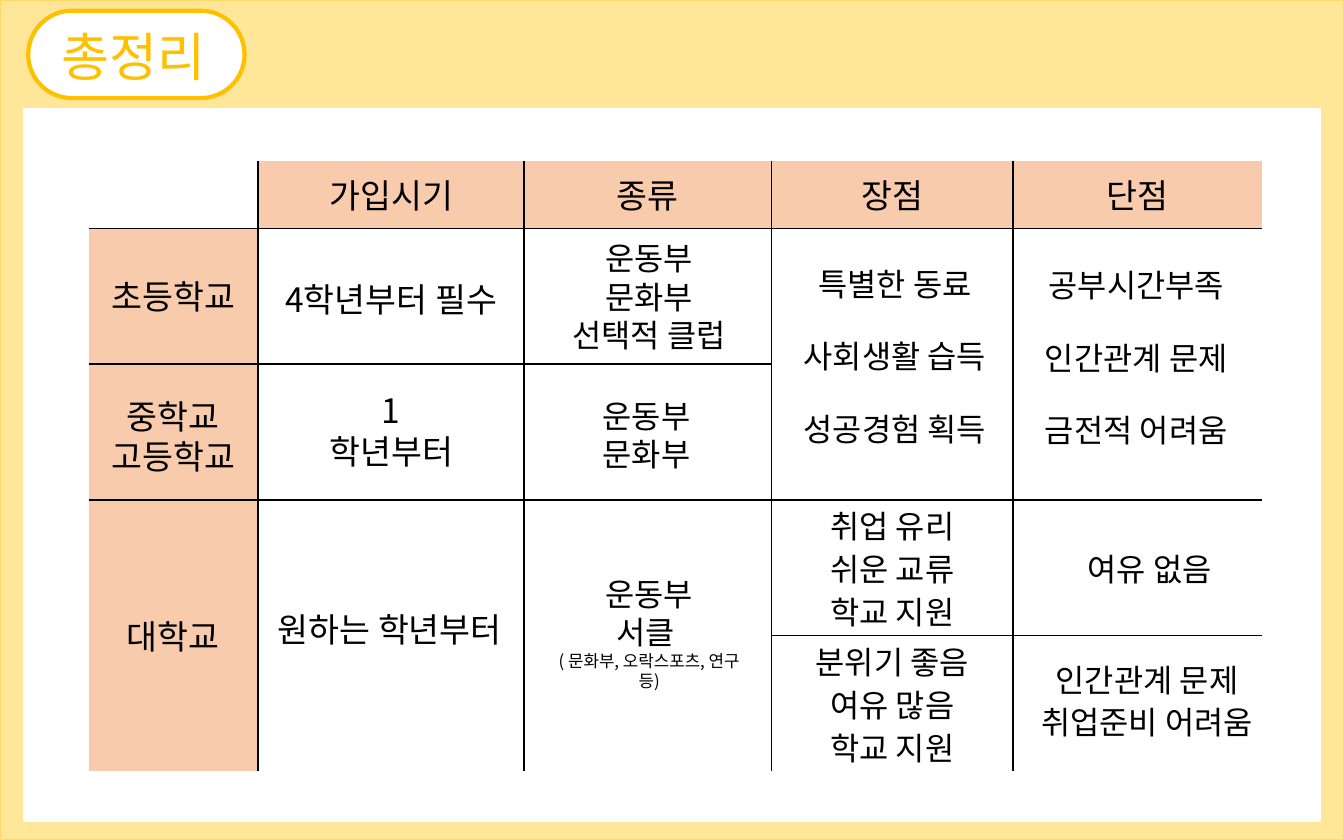
from itertools import accumulate, product

from lxml.etree import SubElement
from pptx import Presentation
from pptx.dml.color import RGBColor
from pptx.enum.shapes import MSO_SHAPE
from pptx.enum.text import MSO_ANCHOR, PP_ALIGN
from pptx.oxml.ns import qn
from pptx.util import Pt

FONT = "Noto Sans CJK KR"
BLACK, WHITE, AMBER, PEACH = "000000", "FFFFFF", "FFC000", "F8CBAD"
COLUMNS = [126, 198, 184, 180, 185]
ROWS = [50, 101, 101, 101, 101]
SPANS = {(1, 3): 2, (1, 4): 2, (3, 0): 2, (3, 1): 2, (3, 2): 2}
HEADERS = ["가입시기", "종류", "장점", "단점"]
NOTE = "( 문화부, 오락스포츠, 연구\v등)"
ENTRIES = [
    (1, 0, 18, 0, 0, 0, ["초등학교"]),
    (2, 0, 18, 0, 0, 3, ["중학교", "고등학교"]),
    (3, 0, 18, 0, 0, 0, ["대학교"]),
    (1, 1, 18, 0, 0, 2, ["4학년부터 필수"]),
    (2, 1, 18, 0, 0, -1, ["1\v학년부터"]),
    (3, 1, 18, 0, -1, -5, ["원하는 학년부터"]),
    (1, 2, 17, 0, 1, 0, ["운동부", "문화부", "선택적 클럽"]),
    (2, 2, 17, 0, -1, 2, ["운동부", "문화부"]),
    (3, 2, 17, 0, 1, -2, ["운동부", "서클 ", NOTE]),
    (1, 3, 17, 54, 2, -6, ["특별한 동료", "사회생활 습득", "성공경험 획득"]),
    (3, 3, 17, 32, 0, 1, ["취업 유리", "쉬운 교류", "학교 지원"]),
    (4, 3, 17, 32, 0, 1, ["분위기 좋음", "여유 많음", "학교 지원"]),
    (1, 4, 17, 54, -1, -5, ["공부시간부족", "인간관계 문제", "금전적 어려움"]),
    (3, 4, 17, 0, 9, 1, ["여유 없음"]),
    (4, 4, 17, 31, 7, -2, ["인간관계 문제", "취업준비 어려움"]),
]


def px(length):
    """Turn px, 100 to the inch, into EMU."""
    return round(length * 9144)


def rgb(code):
    """Turn a hex string into a colour."""
    return RGBColor.from_string(code)


def apply(target, values):
    """Set each attribute of the target from a dict."""
    for key, value in values.items():
        setattr(target, key, value)


def panel(slide, box, preset, fill, edge, weight):
    """Draw a filled and outlined preset shape."""
    shape = slide.shapes.add_shape(preset, *map(px, box))
    shape.shadow.inherit = False
    shape.fill.solid()
    shape.fill.fore_color.rgb = rgb(fill)
    shape.line.color.rgb = rgb(edge)
    shape.line.width = Pt(weight)
    return shape


def write(slide, box, lines, size, color=BLACK, align=PP_ALIGN.CENTER):
    """Write lines as paragraphs in a box, centred on its height."""
    frame = slide.shapes.add_textbox(*map(px, box)).text_frame
    apply(frame, {"word_wrap": False, "vertical_anchor": MSO_ANCHOR.MIDDLE})
    for index, line in enumerate(lines):
        paragraph = frame.add_paragraph() if index else frame.paragraphs[0]
        paragraph.text = line
        paragraph.alignment = align
        for run in paragraph.runs:
            points = 9 if line == NOTE else size
            apply(run.font, {"name": FONT, "size": Pt(points)})
            run.font.color.rgb = rgb(color)
            SubElement(run.font._element, qn("a:ea"), typeface=FONT)


def border(cell, sides):
    """Draw the sides marked true in black and leave the others clear."""
    properties = cell._tc.get_or_add_tcPr()
    for side, drawn in sides.items():
        line = SubElement(properties, qn(f"a:ln{side}"), w=str(Pt(1)))
        if drawn:
            fill = SubElement(line, qn("a:solidFill"))
            SubElement(fill, qn("a:srgbClr"), val=BLACK)
        else:
            SubElement(line, qn("a:noFill"))


def grid(slide, box):
    """Draw the comparison table with merged cells and inner rules."""
    table = slide.shapes.add_table(len(ROWS), len(COLUMNS), *map(px, box)).table
    for column, width in zip(table.columns, COLUMNS):
        column.width = px(width)
    for row, height in zip(table.rows, ROWS):
        row.height = px(height)
    for (row, column), span in SPANS.items():
        table.cell(row, column).merge(table.cell(row + span - 1, column))
    for row, column in product(range(len(ROWS)), range(len(COLUMNS))):
        cell = table.cell(row, column)
        border(cell, {
            "L": column > 0,
            "R": column < len(COLUMNS) - 1,
            "T": row > 0 and not cell.is_spanned,
            "B": row + SPANS.get((row, column), 1) < len(ROWS),
        })
        cell.fill.solid()
        heading = (row == 0) != (column == 0)
        cell.fill.fore_color.rgb = rgb(PEACH if heading else WHITE)


def entries(slide, box):
    """Write the wording over the cells of the table in the box."""
    left, top, _, _ = box
    lefts = list(accumulate(COLUMNS, initial=left))
    tops = list(accumulate(ROWS, initial=top))
    headers = [(0, column, 18, 0, 0, 0, [header])
               for column, header in enumerate(HEADERS, 1)]
    for row, column, size, pitch, dx, dy, lines in headers + ENTRIES:
        bottom = tops[row + SPANS.get((row, column), 1)]
        middle = (tops[row] + bottom) / 2 + dy
        start = lefts[column] + dx
        blocks = [[line] for line in lines] if pitch else [lines]
        for index, block in enumerate(blocks):
            height = 10 + 30 * len(block)
            center = middle + (index - (len(blocks) - 1) / 2) * pitch
            area = (start, center - height / 2, COLUMNS[column], height)
            write(slide, area, block, size)


def title(slide, box):
    """Draw the rounded title badge."""
    left, top, _, _ = box
    badge = panel(slide, box, MSO_SHAPE.ROUNDED_RECTANGLE, WHITE, AMBER, 2.25)
    badge.adjustments[0] = 0.5
    area = (left + 15, top + 5, 136, 57)
    write(slide, area, ["총정리"], 28, AMBER, PP_ALIGN.LEFT)


def main():
    """Build the summary slide and save it."""
    deck = Presentation()
    apply(deck, {"slide_width": px(1000), "slide_height": px(625)})
    slide = deck.slides.add_slide(deck.slide_layouts[6])
    panel(slide, (0, 0, 1000, 625), MSO_SHAPE.RECTANGLE, "FFE699", "FFD966", 1)
    panel(slide, (18, 81, 964, 530), MSO_SHAPE.RECTANGLE, WHITE, WHITE, 1)
    table_box = (66, 120, sum(COLUMNS), sum(ROWS))
    grid(slide, table_box)
    entries(slide, table_box)
    title(slide, (21, 8, 161, 65))
    deck.save("out.pptx")


if __name__ == "__main__":
    main()
